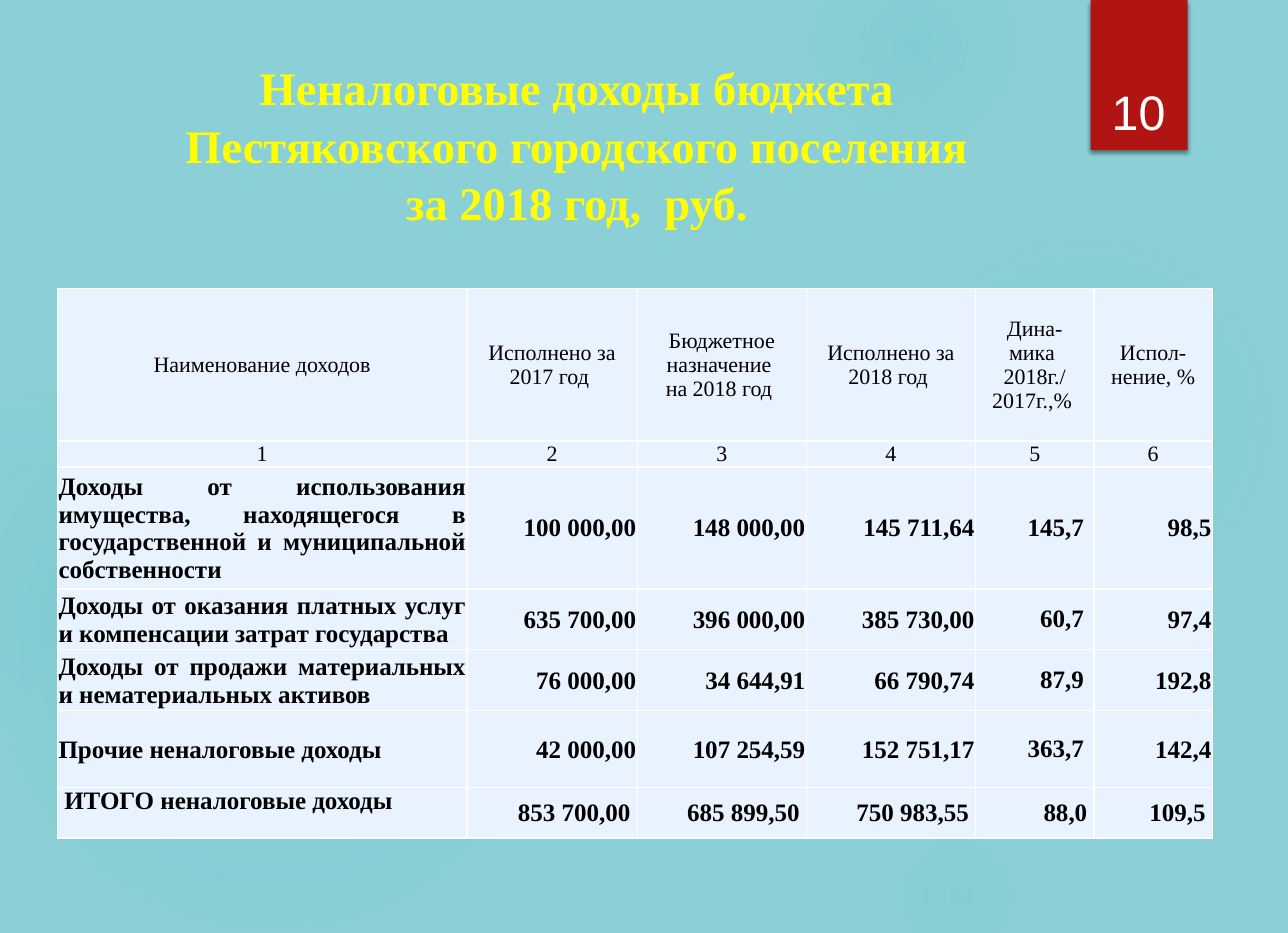
import pptx
import pptx.dml.color
import pptx.enum.shapes
import pptx.enum.text
import pptx.oxml
import pptx.oxml.ns
import pptx.util
from pptx.util import Inches

RGBColor = pptx.dml.color.RGBColor
Align = pptx.enum.text.PP_ALIGN
Anchor = pptx.enum.text.MSO_ANCHOR
Preset = pptx.enum.shapes.MSO_SHAPE

BACKGROUND = RGBColor(0x8A, 0xD0, 0xD6)
BUBBLE = RGBColor(0x50, 0xB9, 0xC1)
RED = RGBColor(0xB0, 0x15, 0x13)
CELL = RGBColor(0xE8, 0xF3, 0xFF)
YELLOW = RGBColor(0xFF, 0xFF, 0x00)
WHITE = RGBColor(0xFF, 0xFF, 0xFF)
BLACK = RGBColor(0x00, 0x00, 0x00)
SERIF = "Times New Roman"

# left, top, width, height, then (position, opacity) stops in percent
BUBBLES = [
    (7.87, 2.02, 3.52, 3.4, [(0, 7), (36, 6), (69, 0)]),
    (7.1, -0.55, 2, 1.93, [(0, 14), (36, 7), (73, 0)]),
    (7.87, 7.35, 1.24, 1.19, [(0, 9), (36, 5), (66, 0)]),
    (-0.19, 3.22, 5.23, 5.05, [(0, 11), (36, 10), (75, 0)]),
    (-1.05, 3.49, 2.95, 2.85, [(0, 8), (36, 8), (72, 0)]),
]

COLUMN_WIDTHS = [3.63, 1.51, 1.5, 1.5, 1.05, 1.05]
ROW_HEIGHTS = [1.35, 0.23, 1.08, 0.54, 0.54, 0.68, 0.45]
INCOME = [
    ["Наименование доходов", "Исполнено за 2017 год ", "Бюджетное назначение \nна 2018 год ",
     "Исполнено за 2018 год ", "Дина-\nмика \n2018г./ 2017г.,% ", "Испол-нение, %"],
    ["1", "2", "3", "4", "5", "6"],
    ["Доходы от использовaния имуществa, нaходящегося в госудaрственной и муниципaльной собственности",
     "100 000,00", "148 000,00", "145 711,64", "145,7", "98,5"],
    ["Доходы от окaзaния плaтных услуг и компенсaции зaтрaт госудaрствa",
     "635 700,00", "396 000,00", "385 730,00", "60,7", "97,4"],
    ["Доходы от продaжи мaтериaльных и немaтериaльных aктивов",
     "76 000,00", "34 644,91", "66 790,74", "87,9", "192,8"],
    ["Прочие ненaлоговые доходы",
     "42 000,00", "107 254,59", "152 751,17", "363,7", "142,4"],
    ["ИТОГО неналоговые доходы",
     "853 700,00", "685 899,50", "750 983,55", "88,0", "109,5"],
]


def write_text(frame, text, *, size, color, font=SERIF, bold=False, align=Align.CENTER, spacing=None):
    """Fill a text frame, one paragraph for each line of the text."""
    frame.word_wrap = True
    for index, line in enumerate(text.split("\n")):
        para = frame.paragraphs[0] if index == 0 else frame.add_paragraph()
        para.text = line
        para.alignment = align
        para.line_spacing = spacing
        for span in para.runs:
            span.font.name = font
            span.font.size = pptx.util.Pt(size)
            span.font.bold = bold
            span.font.color.rgb = color


def xml(markup):
    return pptx.oxml.parse_xml(markup.replace(">", f" {pptx.oxml.ns.nsdecls('a')}>", 1))


def add_plain_shape(page, preset, left, top, width, height):
    shape = page.shapes.add_shape(preset, Inches(left), Inches(top), Inches(width), Inches(height))
    shape.shadow.inherit = False
    shape.line.fill.background()
    return shape


def add_bubble(page, left, top, width, height, stops):
    """Add a circle that fades out from its centre."""
    bubble = add_plain_shape(page, Preset.OVAL, left, top, width, height)
    stop_list = "".join(
        f'<a:gs pos="{position * 1000}"><a:srgbClr val="{BUBBLE}">'
        f'<a:alpha val="{opacity * 1000}"/></a:srgbClr></a:gs>'
        for position, opacity in stops)
    gradient = xml(
        f'<a:gradFill><a:gsLst>{stop_list}</a:gsLst><a:path path="circle">'
        '<a:fillToRect l="50000" t="50000" r="50000" b="50000"/></a:path></a:gradFill>')
    bubble._element.spPr.find(pptx.oxml.ns.qn("a:prstGeom")).addnext(gradient)


def add_page_number(page, number):
    ribbon = add_plain_shape(page, Preset.RECTANGLE, 9.67, 0, 0.86, 1.33)
    ribbon.fill.solid()
    ribbon.fill.fore_color.rgb = RED
    effects = ribbon._element.spPr.find(pptx.oxml.ns.qn("a:effectLst"))
    effects.append(xml(
        '<a:outerShdw blurRad="38100" dist="25400" dir="5400000" rotWithShape="0">'
        f'<a:srgbClr val="{BLACK}"><a:alpha val="45000"/></a:srgbClr></a:outerShdw>'))
    box = page.shapes.add_textbox(Inches(9.7), Inches(0.36), Inches(0.79), Inches(0.93))
    box.text_frame.vertical_anchor = Anchor.BOTTOM
    write_text(box.text_frame, number, size=30.9, color=WHITE, font="Arial")


def place_title(page, text):
    title = page.shapes.title
    title.left, title.top = Inches(0.98), Inches(0.43)
    title.width, title.height = Inches(8.27), Inches(1.78)
    title.text_frame.vertical_anchor = Anchor.TOP
    title.text_frame.margin_top = Inches(0.08)
    write_text(title.text_frame, text, size=29.7, color=YELLOW, bold=True, spacing=1.03)
    page.shapes._spTree.append(title._element)


def add_borders(cell):
    properties = cell._tc.get_or_add_tcPr()
    for index, side in enumerate(("lnL", "lnR", "lnT", "lnB")):
        properties.insert(index, xml(
            f'<a:{side} w="12700"><a:solidFill><a:srgbClr val="{WHITE}"/></a:solidFill></a:{side}>'))


def set_margins(cell, side, top):
    cell.margin_left = cell.margin_right = Inches(side)
    cell.margin_top, cell.margin_bottom = Inches(top), 0


def format_cell(cell, text, row, column):
    heading, total = row < 2, row == len(INCOME) - 1
    if heading or total:
        set_margins(cell, 0.06, 0)
    elif column == 4:
        set_margins(cell, 0.09, 0)
    else:
        set_margins(cell, 0.01, 0.01)
    if heading:
        align = Align.CENTER
    elif column > 0:
        align = Align.RIGHT
    else:
        align = Align.LEFT if total else Align.JUSTIFY
    cell.vertical_anchor = Anchor.TOP if total and column == 0 else Anchor.MIDDLE
    cell.fill.solid()
    cell.fill.fore_color.rgb = CELL
    add_borders(cell)
    write_text(cell.text_frame, text, size=14 if heading else 16, color=BLACK,
               bold=not heading, align=align)


def add_income_table(page):
    table = page.shapes.add_table(
        len(ROW_HEIGHTS), len(COLUMN_WIDTHS), Inches(0.51), Inches(2.56),
        Inches(sum(COLUMN_WIDTHS)), Inches(sum(ROW_HEIGHTS))).table
    for column, width in zip(table.columns, COLUMN_WIDTHS):
        column.width = Inches(width)
    for row, height in zip(table.rows, ROW_HEIGHTS):
        row.height = Inches(height)
    for row, texts in enumerate(INCOME):
        for column, text in enumerate(texts):
            format_cell(table.cell(row, column), text, row, column)


def main():
    deck = pptx.Presentation()
    deck.slide_width, deck.slide_height = Inches(11.42), Inches(8.27)
    page = deck.slides.add_slide(deck.slide_layouts.get_by_name("Title Only"))
    page.background.fill.solid()
    page.background.fill.fore_color.rgb = BACKGROUND
    for bubble in BUBBLES:
        add_bubble(page, *bubble)
    add_page_number(page, "10")
    place_title(page, "Неналоговые доходы бюджета Пестяковского городского поселения\vза 2018 год,  руб.")
    add_income_table(page)
    deck.save("out.pptx")


if __name__ == "__main__":
    main()
